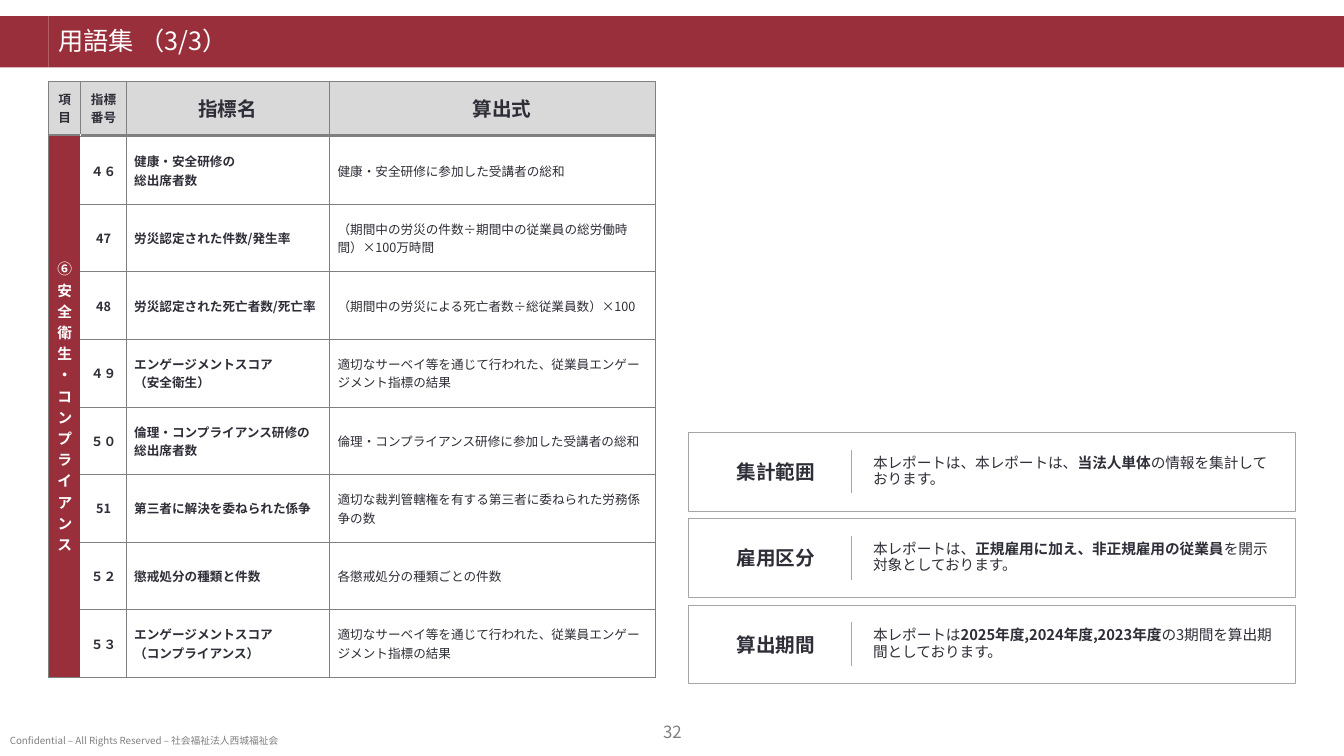
from typing import NamedTuple

from lxml import etree
from pptx import Presentation
from pptx.dml.color import RGBColor
from pptx.enum.shapes import MSO_CONNECTOR, MSO_SHAPE
from pptx.enum.text import MSO_ANCHOR, PP_ALIGN
from pptx.oxml.ns import qn
from pptx.util import Inches, Pt

LEFT, CENTER = PP_ALIGN.LEFT, PP_ALIGN.CENTER
MIDDLE = MSO_ANCHOR.MIDDLE
RECTANGLE, STRAIGHT = MSO_SHAPE.RECTANGLE, MSO_CONNECTOR.STRAIGHT
FONT = "Noto Sans CJK JP"
CRIMSON, INK, GREY, SILVER = "992F3A", "2E2E38", "808080", "D9D9D9"
FRAME_GREY, PAGE_GREY, WHITE = "A6A6A6", "7E7E80", "FFFFFF"
SLIDE_WIDTH, SLIDE_HEIGHT = Inches(13.33), Inches(7.5)

MARGIN = 3.6
BAND_TOP, BAND_HEIGHT = 2.13, 6.8
TABLE_TOP, TABLE_WIDTH = 10.8, 45.15
COLUMN_WIDTHS = (2.42, 3.37, 15.13, 24.23)
HEADER_HEIGHT, ROW_HEIGHT = 7.07, 8.94
HEADER_ROW, RULE_ROW = 0, 1
CARD_LEFT, CARD_TOP, CARD_HEIGHT, CARD_PITCH = 51.24, 57.2, 10.4, 11.42


class Area(NamedTuple):
    """A rectangle in percent of the slide's width and height."""
    left: float
    top: float
    width: float
    height: float


class Style(NamedTuple):
    """Look of a piece of text."""
    size: float
    color: str = INK
    bold: bool = False
    align: PP_ALIGN = LEFT
    spacing: float = 1.0


class Indicator(NamedTuple):
    """One glossary row."""
    number: str
    title: str
    formula: str


class Card(NamedTuple):
    """A scope note whose starred words are bold."""
    heading: str
    note: str


SMALL_HEADER = Style(9, bold=True, align=CENTER)
LARGE_HEADER = Style(14, bold=True, align=CENTER)
CATEGORY = Style(10.5, WHITE, True, CENTER)
INDICATOR_STYLES = (SMALL_HEADER, Style(9, bold=True), Style(9))
HEADERS = (("項目", SMALL_HEADER), ("指標番号", SMALL_HEADER),
           ("指標名", LARGE_HEADER), ("　算出式", LARGE_HEADER))
ENGAGEMENT = "適切なサーベイ等を通じて行われた、従業員エンゲージメント指標の結果"
INDICATORS = (
    Indicator("４６", "健康・安全研修の\n総出席者数", "健康・安全研修に参加した受講者の総和"),
    Indicator("47", "労災認定された件数/発生率",
              "（期間中の労災の件数÷期間中の従業員の総労働時間）×100万時間"),
    Indicator("48", "労災認定された死亡者数/死亡率",
              "（期間中の労災による死亡者数÷総従業員数）×100"),
    Indicator("４９", "エンゲージメントスコア\n（安全衛生）", ENGAGEMENT),
    Indicator("５０", "倫理・コンプライアンス研修の\n総出席者数",
              "倫理・コンプライアンス研修に参加した受講者の総和"),
    Indicator("51", "第三者に解決を委ねられた係争",
              "適切な裁判管轄権を有する第三者に委ねられた労務係争の数"),
    Indicator("５２", "懲戒処分の種類と件数", "各懲戒処分の種類ごとの件数"),
    Indicator("５３", "エンゲージメントスコア\n（コンプライアンス）", ENGAGEMENT),
)
CARDS = (
    Card("集計範囲", "本レポートは、本レポートは、*当法人単体*の情報を集計しております。"),
    Card("雇用区分", "本レポートは、*正規雇用に加え、非正規雇用の従業員*を開示対象としております。"),
    Card("算出期間", "本レポートは*2025年度,2024年度,2023年度*の3期間を算出期間としております。"),
)


def rgb(color: str) -> RGBColor:
    """Turn a hex string into a colour."""
    return RGBColor.from_string(color)


def across(percent: float) -> int:
    """Give a share of the slide's width."""
    return round(SLIDE_WIDTH * percent / 100)


def down(percent: float) -> int:
    """Give a share of the slide's height."""
    return round(SLIDE_HEIGHT * percent / 100)


def place(area: Area) -> tuple[int, int, int, int]:
    """Turn an area into slide lengths."""
    return across(area.left), down(area.top), across(area.width), down(area.height)


def write(frame, text: str, style: Style) -> None:
    """Fill a text frame, with starred words in bold."""
    frame.text = text
    for paragraph in frame.paragraphs:
        paragraph.alignment = style.align
        paragraph.line_spacing = style.spacing
        lead, *others = paragraph.text.split("*")
        paragraph.text = lead
        for segment in others:
            paragraph.add_run().text = segment
        for index, run in enumerate(paragraph.runs):
            run.font.size = Pt(style.size)
            run.font.bold = style.bold or index % 2 == 1
            run.font.color.rgb = rgb(style.color)
            run.font.name = FONT
            etree.SubElement(run.font._element, qn("a:ea"), typeface=FONT)


def add_label(slide, area: Area, text: str, style: Style) -> None:
    """Add a wrapped, vertically centred text box."""
    frame = slide.shapes.add_textbox(*place(area)).text_frame
    frame.word_wrap = True
    frame.vertical_anchor = MIDDLE
    write(frame, text, style)


def add_band(slide, area: Area):
    """Add a crimson strip without outline."""
    band = slide.shapes.add_shape(RECTANGLE, *place(area))
    band.shadow.inherit = False
    band.fill.solid()
    band.fill.fore_color.rgb = rgb(CRIMSON)
    band.line.fill.background()
    return band


def style_cell(cell, r: int, c: int, last_row: int, last_column: int) -> None:
    """Set a cell's margins, grey edges and fill."""
    cell.margin_left = cell.margin_right = Inches(0.08)
    cell.margin_top = cell.margin_bottom = Inches(0 if r == RULE_ROW and c else 0.08)
    cell.vertical_anchor = MIDDLE
    widths = {"L": 1 if c == 0 else 0.75, "R": 1 if c == last_column else 0.75,
              "T": 1 if r <= RULE_ROW else 0.75,
              "B": 1 if r in (HEADER_ROW, last_row) else 0.75}
    if r > HEADER_ROW and c < 2:
        del widths["L" if c else "R"]
    properties = cell._tc.get_or_add_tcPr()
    for side, width in widths.items():
        edge = etree.SubElement(properties, qn(f"a:ln{side}"), w=str(Pt(width)))
        fill = etree.SubElement(edge, qn("a:solidFill"))
        etree.SubElement(fill, qn("a:srgbClr"), val=GREY)
    if r > RULE_ROW and c:
        cell.fill.background()
    else:
        cell.fill.solid()
        cell.fill.fore_color.rgb = rgb(SILVER if r == HEADER_ROW else CRIMSON)


def add_glossary(slide) -> None:
    """Add the table of indicators."""
    last_row, last_column = RULE_ROW + len(INDICATORS), len(COLUMN_WIDTHS) - 1
    heights = (HEADER_HEIGHT, 0) + (ROW_HEIGHT,) * len(INDICATORS)
    area = Area(MARGIN, TABLE_TOP, TABLE_WIDTH, sum(heights))
    table = slide.shapes.add_table(last_row + 1, last_column + 1, *place(area)).table
    table.first_row = table.horz_banding = False
    for column, width in zip(table.columns, COLUMN_WIDTHS):
        column.width = across(width)
    for r, (row, height) in enumerate(zip(table.rows, heights)):
        row.height = down(height)
        for c, cell in enumerate(row.cells):
            style_cell(cell, r, c, last_row, last_column)
            if r == HEADER_ROW:
                write(cell.text_frame, *HEADERS[c])
            elif r > RULE_ROW and c:
                write(cell.text_frame, INDICATORS[r - 2][c - 1], INDICATOR_STYLES[c - 1])
            elif c:
                etree.SubElement(cell.text_frame.paragraphs[0]._p, qn("a:endParaRPr"), sz="100")
    table.cell(RULE_ROW, 1).merge(table.cell(RULE_ROW, last_column))
    category = table.cell(RULE_ROW, 0)
    category.merge(table.cell(last_row, 0))
    write(category.text_frame, "⑥安全衛生・コンプライアンス", CATEGORY)
    for holder in (category._tc.get_or_add_tcPr(), category.text_frame._txBody.bodyPr):
        holder.set("vert", "eaVert")


def add_card(slide, card: Card, top: float) -> None:
    """Add a framed note with its heading and divider."""
    frame = slide.shapes.add_shape(
        RECTANGLE, *place(Area(CARD_LEFT, top, TABLE_WIDTH, CARD_HEIGHT)))
    frame.shadow.inherit = False
    frame.fill.background()
    frame.line.color.rgb = rgb(FRAME_GREY)
    frame.line.width = Pt(0.75)
    x, start, _, length = place(Area(63.35, top + 2.27, 0, 5.8))
    divider = slide.shapes.add_connector(STRAIGHT, x, start, x, start + length)
    divider.line.color.rgb = rgb(FRAME_GREY)
    divider.line.width = Pt(1)
    etree.SubElement(divider._element.spPr, qn("a:effectLst"))
    add_label(slide, Area(53.0, top + 2.27, 9.45, 5.8), card.heading, LARGE_HEADER)
    add_label(slide, Area(64.22, top + 1.6, 31.43, 7.1), card.note, Style(10.5, spacing=0.93))


def main() -> None:
    """Build and save the glossary slide."""
    deck = Presentation()
    deck.slide_width, deck.slide_height = SLIDE_WIDTH, SLIDE_HEIGHT
    slide = deck.slides.add_slide(deck.slide_layouts[6])
    add_band(slide, Area(0, BAND_TOP, MARGIN, BAND_HEIGHT))
    add_label(slide, Area(0, 96, 48.09, 4),
              "Confidential – All Rights Reserved – 社会福祉法人西城福祉会", Style(7, GREY))
    add_glossary(slide)
    title = add_band(slide, Area(MARGIN, BAND_TOP, 100 - MARGIN, BAND_HEIGHT))
    title.text_frame.vertical_anchor = MIDDLE
    write(title.text_frame, "用語集 （3/3）", Style(18, WHITE, spacing=0.9))
    add_label(slide, Area(48.09, 93.6, 3.9, 6.4), "32", Style(12, PAGE_GREY, align=CENTER))
    for index, card in enumerate(CARDS):
        add_card(slide, card, CARD_TOP + index * CARD_PITCH)
    deck.save("out.pptx")


if __name__ == "__main__":
    main()
